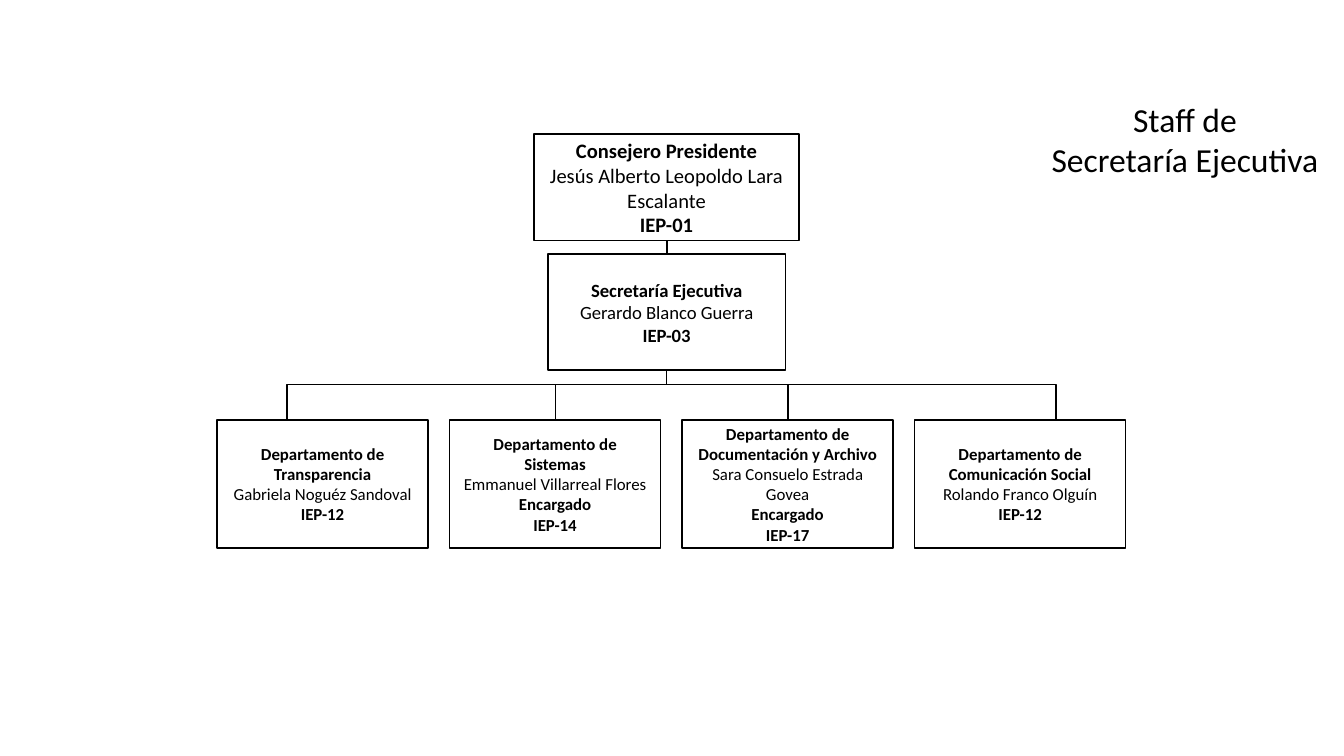
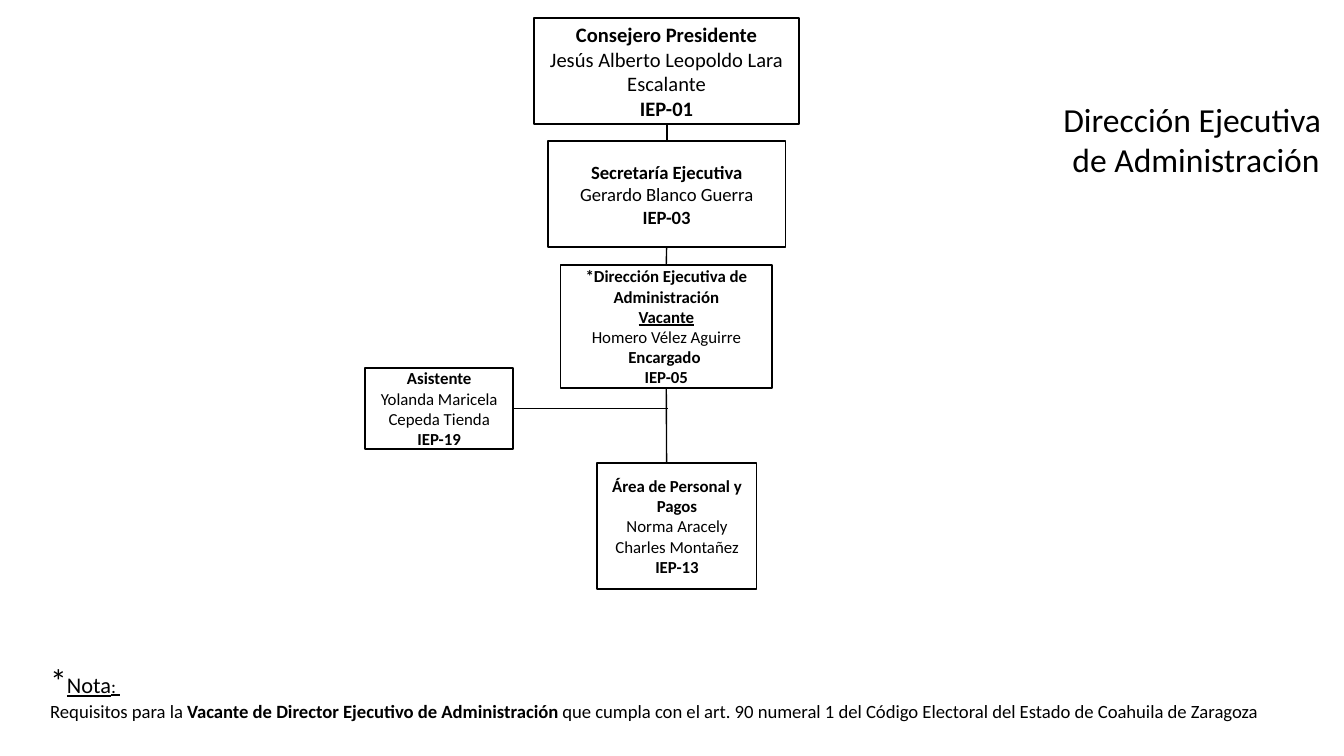
from dataclasses import dataclass

from lxml import etree
from pptx import Presentation
from pptx import util as u
from pptx.dml.color import RGBColor
from pptx.enum import shapes, text
from pptx.oxml import ns

SCALE = 4572
TOP, BOTTOM, RIGHT = 0, 2, 3


@dataclass(frozen=True)
class Theme:
    """Colours, font, type sizes and line widths shared by the slides."""
    ink: RGBColor = RGBColor(0, 0, 0)
    font: str = "Calibri"
    title: int = 18
    president: int = 11
    secretary: int = 10
    post: int = 9
    note_head: int = 12
    note: int = 10
    border: float = 1
    thin: float = 0.75


T = Theme()

PRESIDENT = [("Consejero Presidente", "b"),
             ("Jesús Alberto Leopoldo Lara Escalante", ""), ("IEP-01", "b")]
SECRETARY = [("Secretaría Ejecutiva", "b"),
             ("Gerardo Blanco Guerra", ""), ("IEP-03", "b")]
DEPARTMENTS = [
    [("Departamento de Transparencia", "b"),
     ("Gabriela Noguéz Sandoval", ""), ("IEP-12", "b")],
    [("Departamento de Sistemas", "b"),
     ("Emmanuel Villarreal Flores\n", ""), ("Encargado", "b"), ("IEP-14", "b")],
    [("Departamento de Documentación y Archivo", "b"),
     ("Sara Consuelo Estrada Govea\n", ""), ("Encargado", "b"), ("IEP-17", "b")],
    [("Departamento de Comunicación Social", "b"),
     ("Rolando Franco Olguín", ""), ("IEP-12", "b")],
]
DIRECTOR = [("*Dirección Ejecutiva de Administración\n", "b"), ("Vacante", "bu"),
            ("Homero Vélez Aguirre\n", ""), ("Encargado ", "b"), ("IEP-05", "b")]
ASSISTANT = [("Asistente", "b"), ("Yolanda Maricela Cepeda Tienda", ""), ("IEP-19", "b")]
STAFF_AREA = [("Área de Personal y Pagos", "b"),
              ("Norma Aracely Charles Montañez", ""), ("IEP-13", "b")]
NOTE = [
    ("*", "", T.title), ("Nota", "u", T.note_head), (": \n", "u", T.note),
    ("Requisitos para la ", "", T.note),
    ("Vacante de Director Ejecutivo de Administración ", "b", T.note),
    ("que cumpla con el art. 90 numeral 1 del Código Electoral del Estado de "
     "Coahuila de Zaragoza", "", T.note),
]


def px(*lengths):
    """Turn px lengths into EMU."""
    return [u.Emu(int(n * SCALE)) for n in lengths]


def joined(lines):
    """Return the lines held in one paragraph by line breaks."""
    return [(words + "\n", style) for words, style in lines[:-1]] + lines[-1:]


def write(tf, paragraphs, align):
    """Fill a text frame with paragraphs of (text, style, size) runs."""
    for i, runs in enumerate(paragraphs):
        p = tf.add_paragraph() if i else tf.paragraphs[0]
        p.alignment = align
        for words, style, size in runs:
            r = p.add_run()
            r.text = words.rstrip("\n")
            r.font.name, r.font.size = T.font, u.Pt(size)
            r.font.color.rgb = T.ink
            r.font.bold, r.font.underline = "b" in style, "u" in style
            if words.endswith("\n"):
                p.add_line_break()


def add_title(s, box, lines):
    """Place the slide title in the given box."""
    sp = s.shapes.title
    sp.left, sp.top, sp.width, sp.height = px(*box)
    tf = sp.text_frame
    tf.word_wrap, tf.auto_size = False, text.MSO_AUTO_SIZE.NONE
    tf.vertical_anchor = text.MSO_ANCHOR.TOP
    write(tf, [[(line, "", T.title)] for line in lines], text.PP_ALIGN.CENTER)


def add_post(s, box, lines, size=T.post):
    """Draw one outlined post with its holder."""
    sp = s.shapes.add_shape(shapes.MSO_SHAPE.RECTANGLE, *px(*box))
    sp.shadow.inherit = False
    sp.fill.background()
    sp.line.color.rgb, sp.line.width = T.ink, u.Pt(T.border)
    sp.text_frame.vertical_anchor = text.MSO_ANCHOR.MIDDLE
    paragraphs, runs = [], []
    for words, style in lines:
        runs.append((words, style, size))
        if not words.endswith("\n"):
            paragraphs.append(runs)
            runs = []
    write(sp.text_frame, paragraphs, text.PP_ALIGN.CENTER)
    return sp


def add_line(s, start, end, width=T.thin, kind=shapes.MSO_CONNECTOR.STRAIGHT):
    """Draw a connector; an end is a point or a (shape, side) pair."""
    points = [e if isinstance(e[0], (int, float)) else (0, 0) for e in (start, end)]
    cx = s.shapes.add_connector(kind, *px(*points[0], *points[1]))
    for e, point, join in zip((start, end), points, (cx.begin_connect, cx.end_connect)):
        if e is not point:
            join(*e)
    cx.line.color.rgb, cx.line.width = T.ink, u.Pt(width)
    etree.SubElement(cx._element.spPr, ns.qn("a:effectLst"))
    return cx


def add_bracket(s, left, right, y, rise, width):
    """Join two points at height y by an elbow that rises above them."""
    mid, half = (left + right) / 2, (right - left) / 2
    cx = add_line(s, (mid + 1, y + half), (mid, y - half), width,
                  shapes.MSO_CONNECTOR.ELBOW)
    sppr = cx._element.spPr
    sppr.find(ns.qn("a:xfrm")).set("rot", str(90 * 60000))
    geom = sppr.find(ns.qn("a:prstGeom"))
    adjust = geom.find(ns.qn("a:avLst"))
    if adjust is None:
        adjust = etree.SubElement(geom, ns.qn("a:avLst"))
    etree.SubElement(adjust, ns.qn("a:gd"), name="adj1", fmla=f"val {rise * 100000}")


def add_leaders(s, box, lines, secretary_top, secretary_height):
    """Draw the president in the box and the secretary below; return the secretary."""
    x, y, w, h = box
    president = add_post(s, box, PRESIDENT, T.president)
    secretary = add_post(s, (x + 20, y + secretary_top, w - 40, secretary_height),
                         lines, T.secretary)
    add_line(s, (president, BOTTOM), (secretary, TOP), T.border)
    return secretary


def add_departments(s, box, gap, rise):
    """Draw the row of departments across the box with the brackets above."""
    x, y, w, h = box
    n = len(DEPARTMENTS)
    cell = (w - gap * (n - 1)) // n
    lefts = [x + i * (cell + gap) for i in range(n)]
    for left, lines in zip(lefts, DEPARTMENTS):
        add_post(s, (left, y, cell, h), lines)
    add_bracket(s, x + 104, x + w - 104, y, rise, T.border)
    add_bracket(s, lefts[1] + cell / 2, lefts[2] + cell / 2, y, rise, T.thin)


def add_administration(s, box, secretary):
    """Draw the director in the box, with the assistant and the area below."""
    x, y, w, h = box
    director = add_post(s, box, DIRECTOR)
    assistant = add_post(s, (x - 291, y + 154, 221, 120), ASSISTANT)
    add_post(s, (x + 55, y + 295, 237, 188), STAFF_AREA)
    add_line(s, (secretary, BOTTOM), (director, TOP))
    add_line(s, (director, BOTTOM), (x + 158, y + 295))
    add_line(s, (x + 160, y + 214), (assistant, RIGHT))


def add_note(s, box):
    """Write the footnote in the box."""
    tf = s.shapes.add_textbox(*px(*box)).text_frame
    tf.word_wrap = True
    write(tf, [NOTE], text.PP_ALIGN.LEFT)


def staff_slide(s):
    """Lay out the staff of the executive secretariat."""
    add_title(s, (1542, 137, 454, 142), ["Staff de ", "Secretaría Ejecutiva "])
    secretary = add_leaders(s, (795, 200, 394, 158), joined(SECRETARY), 178, 173)
    add_line(s, (secretary, BOTTOM), (992, 572))
    add_departments(s, (323, 625, 1352, 190), 32, 52)


def administration_slide(s):
    """Lay out the executive administration office."""
    add_title(s, (1560, 137, 440, 142), ["Dirección Ejecutiva ", "de Administración"])
    secretary = add_leaders(s, (795, 27, 394, 158), SECRETARY, 183, 158)
    add_administration(s, (834, 394, 315, 184), secretary)
    add_note(s, (55, 972, 1922, 114))


def main():
    """Build and save the presentation."""
    prs = Presentation()
    prs.slide_width, prs.slide_height = px(2000, 1125)
    for build in (staff_slide, administration_slide):
        build(prs.slides.add_slide(prs.slide_layouts[5]))
    prs.save("out.pptx")


if __name__ == "__main__":
    main()
